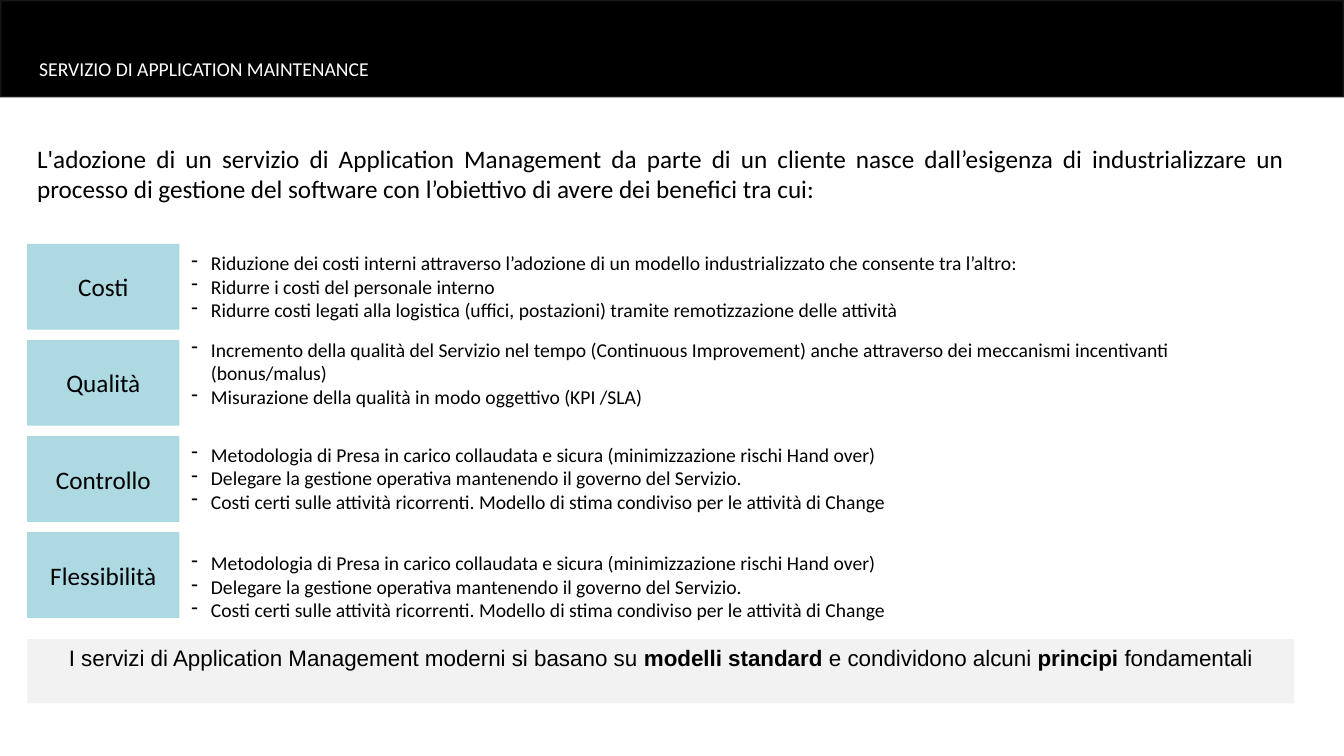
"""Build the slide on the benefits of an application maintenance service."""
from lxml import etree
from pptx import Presentation
from pptx.dml.color import RGBColor
from pptx.enum.shapes import MSO_SHAPE
from pptx.enum.text import MSO_ANCHOR, MSO_AUTO_SIZE, PP_ALIGN
from pptx.oxml.ns import qn
from pptx.util import Pt

RECTANGLE = MSO_SHAPE.RECTANGLE
MIDDLE, TOP = MSO_ANCHOR.MIDDLE, MSO_ANCHOR.TOP
NO_AUTOFIT = MSO_AUTO_SIZE.NONE
LEFT, CENTER, JUSTIFY = PP_ALIGN.LEFT, PP_ALIGN.CENTER, PP_ALIGN.JUSTIFY

MARGIN = 19.44
CONTENT_WIDTH = 905
CARD_TOP, CARD_PITCH = 174.24, 68.64
CARD_WIDTH, CARD_HEIGHT = 108.72, 61.2
BULLET_INDENT = 14

CONTROL_POINTS = [
    "Metodologia di Presa in carico collaudata e sicura (minimizzazione rischi Hand over)",
    "Delegare la gestione operativa mantenendo il governo del Servizio.",
    "Costi certi sulle attività ricorrenti. Modello di stima condiviso per le attività di Change",
]
BENEFITS = [
    ("Costi", 175.7, [
        "Riduzione dei costi interni attraverso l’adozione di un modello industrializzato che consente tra l’altro:",
        "Ridurre i costi del personale interno",
        "Ridurre costi legati alla logistica (uffici, postazioni) tramite remotizzazione delle attività",
    ]),
    ("Qualità", 237.6, [
        "Incremento della qualità del Servizio nel tempo (Continuous Improvement) anche attraverso "
        "dei meccanismi incentivanti (bonus/malus)",
        "Misurazione della qualità in modo oggettivo (KPI /SLA)",
    ]),
    ("Controllo", 312.5, CONTROL_POINTS),
    ("Flessibilità", 390.2, CONTROL_POINTS),
]


def color(value):
    return RGBColor.from_string(value)


def format_paragraph(paragraph, size, alignment, font_color="000000", font_name="Calibri"):
    paragraph.alignment = alignment
    paragraph.font.size = Pt(size)
    paragraph.font.name = font_name
    paragraph.font.color.rgb = color(font_color)


presentation = Presentation()
presentation.slide_width, presentation.slide_height = Pt(960), Pt(540)
slide = presentation.slides.add_slide(presentation.slide_layouts[5])
shapes = slide.shapes

band = shapes.add_shape(RECTANGLE, Pt(0), Pt(0), Pt(960), Pt(69.6))
band.shadow.inherit = False
band.fill.solid()
band.fill.fore_color.rgb = color("000000")
band.line.width = Pt(2)
band.line.color.rgb = color("EBEBEB")
line_color = band.line._ln.find(".//" + qn("a:srgbClr"))
etree.SubElement(line_color, qn("a:alpha"), val="10000")

title = shapes.title
title.element.addprevious(band.element)
title.left, title.top, title.width, title.height = Pt(26), Pt(38.9), Pt(829), Pt(20.9)
title_frame = title.text_frame
title_frame.text = "SERVIZIO DI APPLICATION MAINTENANCE"
title_frame.auto_size = NO_AUTOFIT
title_frame.vertical_anchor = MIDDLE
title_frame.margin_left = title_frame.margin_right = Pt(2)
title_frame.margin_top = title_frame.margin_bottom = Pt(2)
format_paragraph(title_frame.paragraphs[0], 14, LEFT, "FFFFFF")

intro = shapes.add_textbox(Pt(MARGIN), Pt(98.6), Pt(CONTENT_WIDTH), Pt(51))
intro.text_frame.word_wrap = True
intro.text_frame.text = (
    "L'adozione di un servizio di Application Management da parte di un cliente nasce dall’esigenza di "
    "industrializzare un processo di gestione del software con l’obiettivo di avere dei benefici tra cui:"
)
format_paragraph(intro.text_frame.paragraphs[0], 18, JUSTIFY)

for index, (name, points_top, points) in enumerate(BENEFITS):
    card = shapes.add_shape(RECTANGLE, Pt(MARGIN), Pt(CARD_TOP + index * CARD_PITCH),
                            Pt(CARD_WIDTH), Pt(CARD_HEIGHT))
    card.shadow.inherit = False
    card.fill.solid()
    card.fill.fore_color.rgb = color("ACD9E2")
    card.line.fill.background()
    card.text_frame.vertical_anchor = MIDDLE
    card.text_frame.text = name
    format_paragraph(card.text_frame.paragraphs[0], 18, CENTER)

    points_box = shapes.add_textbox(Pt(129.6), Pt(points_top), Pt(763.2), Pt(58.3))
    points_box.text_frame.word_wrap = True
    points_box.text_frame.text = "\n".join(points)
    for paragraph in points_box.text_frame.paragraphs:
        properties = paragraph._p.get_or_add_pPr()
        properties.set("marL", str(Pt(BULLET_INDENT)))
        properties.set("indent", str(-Pt(BULLET_INDENT)))
        etree.SubElement(properties, qn("a:buChar"), char="-")
        format_paragraph(paragraph, 14, LEFT)

summary = shapes.add_shape(RECTANGLE, Pt(MARGIN), Pt(456.5), Pt(CONTENT_WIDTH), Pt(46))
summary.shadow.inherit = False
summary.fill.solid()
summary.fill.fore_color.rgb = color("F2F2F2")
summary.line.fill.background()
summary.text_frame.word_wrap = True
summary.text_frame.vertical_anchor = TOP
summary_paragraph = summary.text_frame.paragraphs[0]
for text, bold in [
    ("I servizi di Application Management moderni si basano su ", False),
    ("modelli standard ", True),
    ("e condividono alcuni ", False),
    ("principi ", True),
    ("fondamentali", False),
]:
    run = summary_paragraph.add_run()
    run.text = text
    run.font.bold = bold
format_paragraph(summary_paragraph, 16, CENTER, font_name="Arial")

presentation.save("out.pptx")
